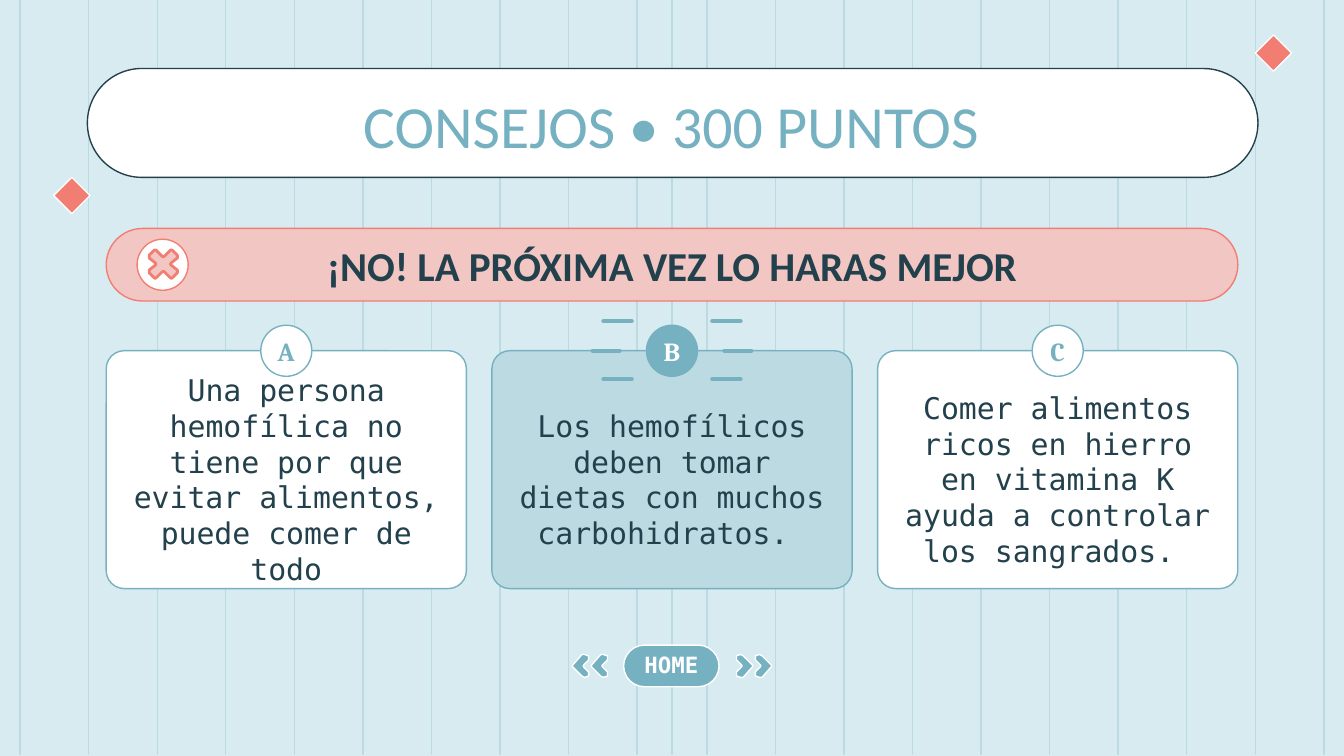
from dataclasses import dataclass

from lxml.etree import SubElement
from pptx import Presentation
from pptx.dml.color import RGBColor
from pptx.enum.shapes import MSO_CONNECTOR, MSO_SHAPE
from pptx.enum.text import MSO_ANCHOR, PP_ALIGN
from pptx.oxml.ns import qn
from pptx.util import Pt

PX = 9144  # EMU per px, 100 px to the inch
PAGE_WIDTH, PAGE_HEIGHT = 1000, 562

SKY = RGBColor(0xD8, 0xEB, 0xF0)
MIST = RGBColor(0xBC, 0xDA, 0xE2)
TEAL = RGBColor(0x76, 0xB1, 0xC1)
INK = RGBColor(0x23, 0x41, 0x4C)
WHITE = RGBColor(0xFF, 0xFF, 0xFF)
CORAL = RGBColor(0xF2, 0x7D, 0x72)
BLUSH = RGBColor(0xF2, 0xC6, 0xC2)

SANS, SERIF, MONO = "Calibri", "Cambria", "DejaVu Sans Mono"


@dataclass(frozen=True)
class Box:
    left: int
    top: int
    width: int
    height: int


@dataclass(frozen=True)
class TextStyle:
    font: str
    size: int
    color: RGBColor
    bold: bool = False
    insets: tuple[int, int, int, int] = (10, 10, 10, 10)  # left, top, right, bottom


@dataclass(frozen=True)
class Answer:
    letter: str
    text: str
    chosen: bool = False


ANSWERS = [
    Answer("A", "Una persona hemofílica no tiene por que evitar alimentos, puede comer de todo"),
    Answer("B", "Los hemofílicos deben tomar dietas con muchos carbohidratos. ", chosen=True),
    Answer("C", "Comer alimentos ricos en hierro en vitamina K ayuda a controlar los sangrados. "),
]
CARD_LEFT, CARD_PITCH, CARD_TOP, CARD_WIDTH, CARD_HEIGHT = 79, 287, 261, 268, 177
BADGE = 38

CROSS = [(5, 0), (10, 5), (11, 5), (16, 0), (17, 0), (21, 4), (21, 6), (16, 10), (16, 11),
         (21, 15), (21, 17), (17, 21), (16, 21), (11, 16), (10, 16), (5, 21), (4, 21),
         (0, 17), (0, 15), (5, 11), (5, 10), (0, 6), (0, 4), (4, 0)]
CHEVRON = [(4, 0), (1, 1), (1, 4), (2, 5), (5, 8), (5, 9), (2, 12), (1, 13), (1, 16),
           (4, 17), (6, 17), (13, 9), (13, 8), (6, 1)]


def paint(shape, fill: RGBColor, line: RGBColor, weight: float = 0.75) -> None:
    shape.shadow.inherit = False
    shape.fill.solid()
    shape.fill.fore_color.rgb = fill
    shape.line.color.rgb = line
    shape.line.width = Pt(weight)


def add_box(page, kind: MSO_SHAPE, box: Box, fill: RGBColor, line: RGBColor,
            corner: float | None = None):
    shape = page.shapes.add_shape(
        kind, box.left * PX, box.top * PX, box.width * PX, box.height * PX)
    if corner is not None:
        shape.adjustments[0] = corner
    paint(shape, fill, line)
    return shape


def write(shape, text: str, style: TextStyle, anchor: MSO_ANCHOR = MSO_ANCHOR.MIDDLE) -> None:
    frame = shape.text_frame
    frame.word_wrap = True
    frame.vertical_anchor = anchor
    (frame.margin_left, frame.margin_top,
     frame.margin_right, frame.margin_bottom) = (inset * PX for inset in style.insets)
    para = frame.paragraphs[0]
    para.text = text
    para.alignment = PP_ALIGN.CENTER
    para.font.name = style.font
    para.font.size = Pt(style.size)
    para.font.bold = style.bold
    para.font.color.rgb = style.color


def add_line(page, start: tuple[int, int], end: tuple[int, int], color: RGBColor,
             weight: float = 0.75, rounded: bool = False) -> None:
    connector = page.shapes.add_connector(
        MSO_CONNECTOR.STRAIGHT, *(value * PX for value in start + end))
    connector.line.color.rgb = color
    connector.line.width = Pt(weight)
    properties = connector._element.spPr
    if rounded:
        properties.find(qn("a:ln")).set("cap", "rnd")
    SubElement(properties, qn("a:effectLst"))


def add_outline(page, points: list[tuple[int, int]], left: int, top: int,
                fill: RGBColor, line: RGBColor, weight: float = 0.75):
    builder = page.shapes.build_freeform(*points[0], scale=PX)
    builder.add_line_segments(points[1:], close=True)
    shape = builder.convert_to_shape(left * PX, top * PX)
    paint(shape, fill, line, weight)
    return shape


def add_answer(page, index: int, answer: Answer) -> None:
    left = CARD_LEFT + index * CARD_PITCH
    card = add_box(page, MSO_SHAPE.ROUNDED_RECTANGLE,
                   Box(left, CARD_TOP, CARD_WIDTH, CARD_HEIGHT),
                   MIST if answer.chosen else WHITE, TEAL, 0.076)
    write(card, answer.text, TextStyle(MONO, 16, INK, insets=(11, 24, 11, 10)))
    badge = add_box(page, MSO_SHAPE.OVAL,
                    Box(left + (CARD_WIDTH - BADGE) // 2, CARD_TOP - BADGE // 2, BADGE, BADGE),
                    TEAL if answer.chosen else WHITE, TEAL)
    write(badge, answer.letter,
          TextStyle(SERIF, 14, WHITE if answer.chosen else TEAL, True, (0, 10, 0, 10)))


def main() -> None:
    deck = Presentation()
    deck.slide_width = PAGE_WIDTH * PX
    deck.slide_height = deck.slide_width * 9 // 16
    page = deck.slides.add_slide(deck.slide_layouts[6])
    page.background.fill.solid()
    page.background.fill.fore_color.rgb = SKY

    # Background stripes, with one more down the middle
    for x in [PAGE_WIDTH // 2] + [round(15 + index * 970 / 19) for index in range(20)]:
        add_line(page, (x, 0), (x, PAGE_HEIGHT), MIST)

    # Title
    add_box(page, MSO_SHAPE.ROUNDED_RECTANGLE, Box(65, 51, 871, 81), WHITE, INK, 0.5)
    for left, top in [(40, 132), (934, 26)]:
        add_box(page, MSO_SHAPE.DIAMOND, Box(left, top, 27, 27), CORAL, WHITE)
    title = page.shapes.add_textbox(131 * PX, 56 * PX, 737 * PX, 65 * PX)
    write(title, "CONSEJOS • 300 PUNTOS", TextStyle(SANS, 32, TEAL), MSO_ANCHOR.TOP)

    # Answers
    for index, answer in enumerate(ANSWERS):
        add_answer(page, index, answer)

    # Verdict
    banner = add_box(page, MSO_SHAPE.ROUNDED_RECTANGLE, Box(79, 170, 842, 54),
                     BLUSH, CORAL, 0.5)
    write(banner, "¡NO! LA PRÓXIMA VEZ LO HARAS MEJOR",
          TextStyle(SANS, 22, INK, True, (30, 10, 30, 10)))
    add_box(page, MSO_SHAPE.OVAL, Box(102, 178, BADGE, BADGE), WHITE, CORAL)
    add_outline(page, CROSS, 111, 186, BLUSH, CORAL, 1.5)

    # Rays on both sides of the chosen badge
    middle = PAGE_WIDTH // 2
    for side in (-1, 1):
        for y, near, far in [(239, 30, 51), (261, 39, 59), (282, 30, 51)]:
            add_line(page, (middle + side * far, y), (middle + side * near, y),
                     TEAL, 2.25, rounded=True)

    # Navigation
    home = add_box(page, MSO_SHAPE.ROUNDED_RECTANGLE, Box(464, 480, 71, 31), TEAL, WHITE, 0.5)
    write(home, "HOME", TextStyle(MONO, 12, WHITE, True, (10, 8, 10, 10)))
    for left, turn in [(547, 0), (561, 0), (439, 180), (425, 180)]:
        add_outline(page, CHEVRON, left, 487, TEAL, WHITE).rotation = turn

    deck.save("out.pptx")


if __name__ == "__main__":
    main()
